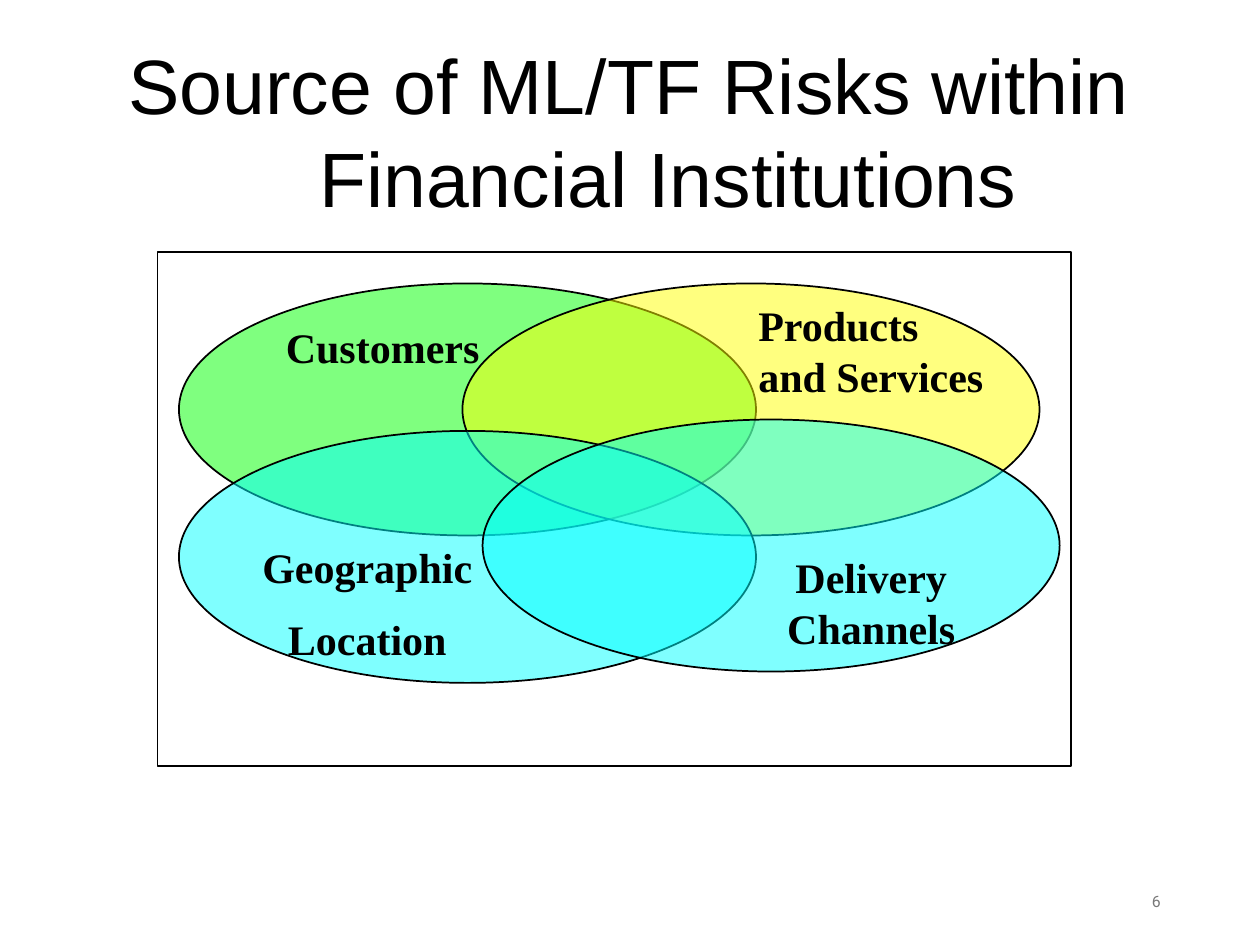
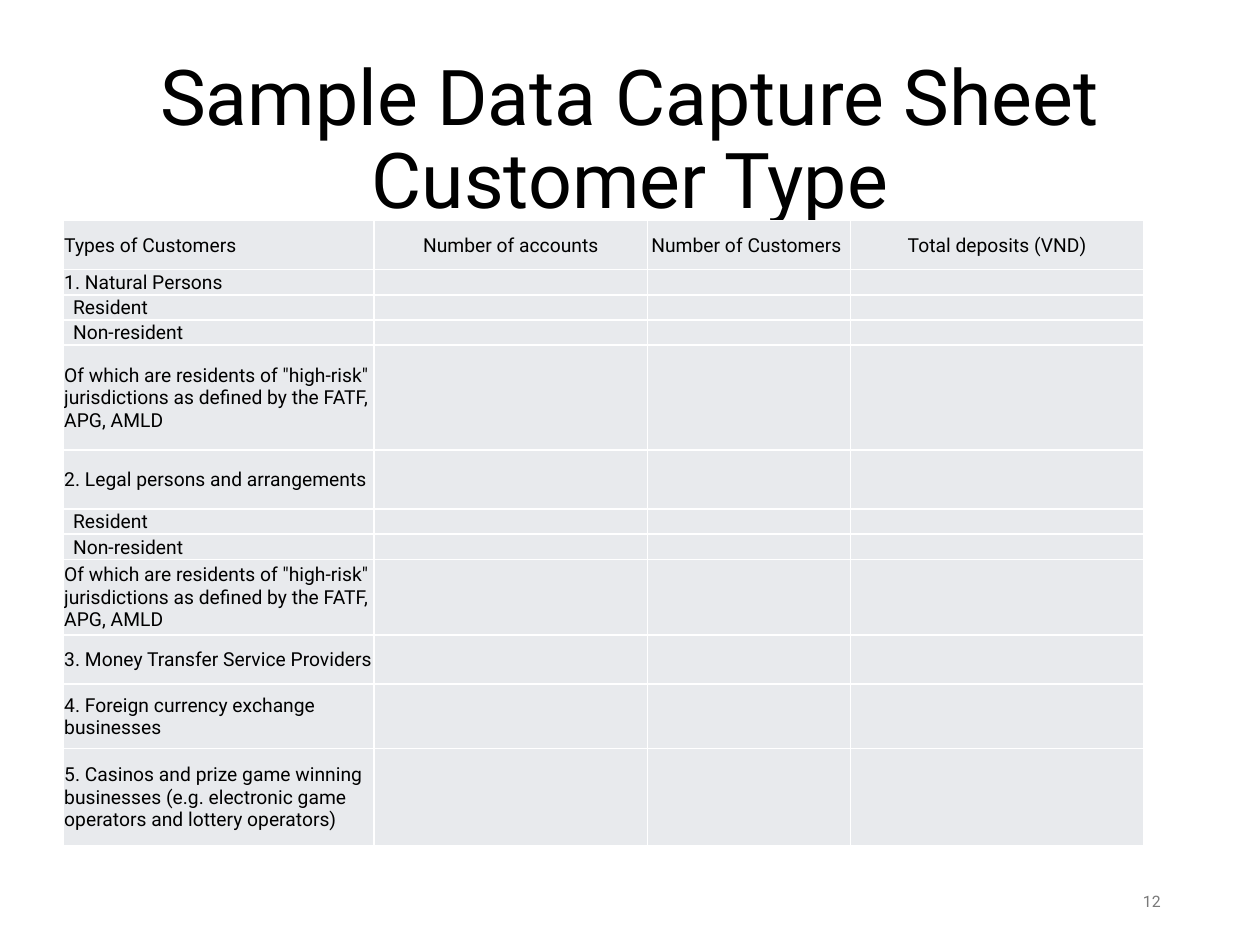
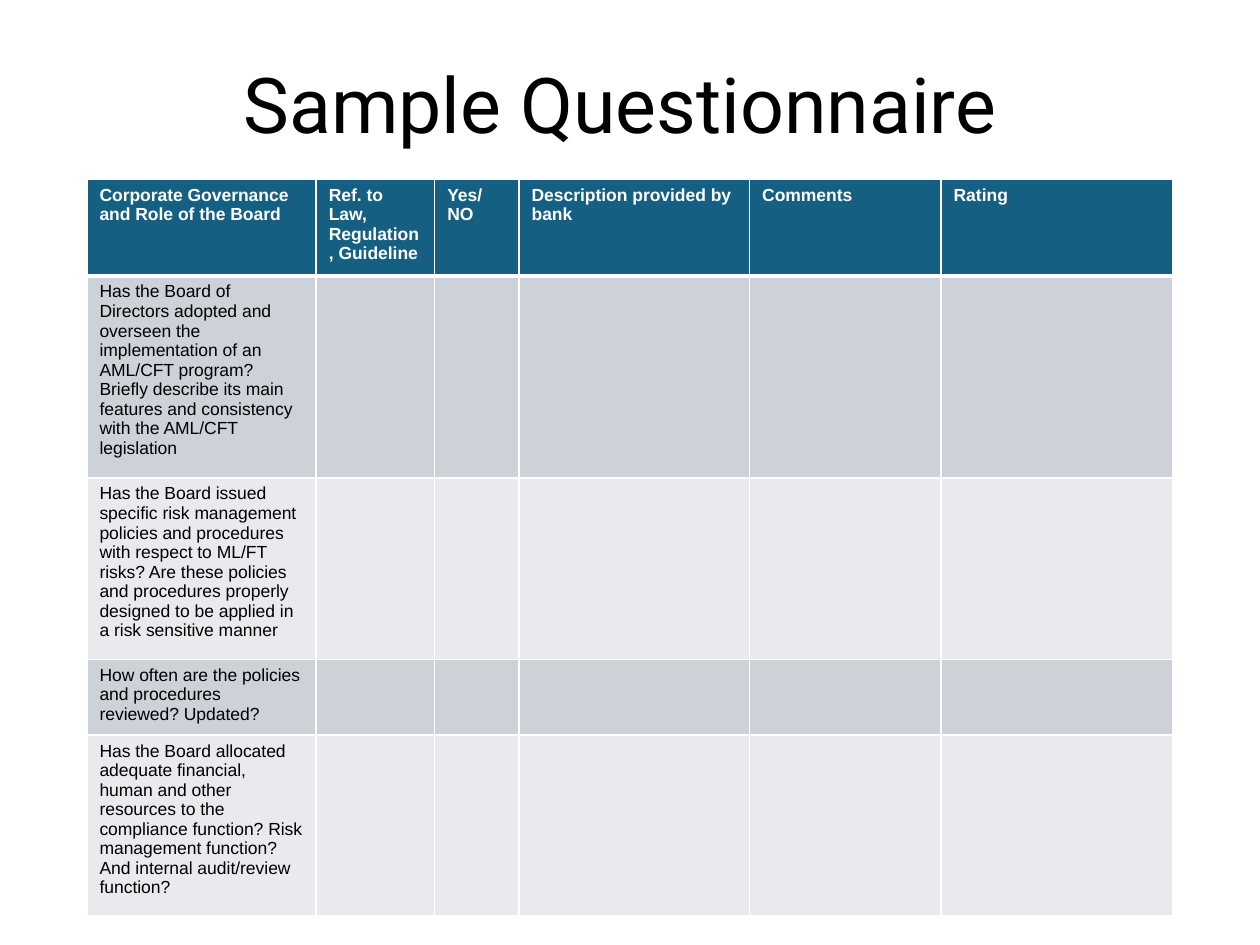
from typing import NamedTuple

import lxml.etree
import pptx
import pptx.dml.color
import pptx.enum.shapes
import pptx.enum.text
import pptx.oxml.ns
import pptx.util

Inches = pptx.util.Inches
Pt = pptx.util.Pt
ALIGN = pptx.enum.text.PP_ALIGN
ANCHOR = pptx.enum.text.MSO_ANCHOR
SHAPE = pptx.enum.shapes.MSO_SHAPE
qn = pptx.oxml.ns.qn

BLACK, WHITE, GRAY = "000000", "FFFFFF", "797979"
TEAL, PALE, DARK = "156082", "E8EAED", "CCD2D8"
SANS, BODY, SERIF = "Roboto", "Arial", "Times New Roman"


class Box(NamedTuple):
    left: float
    top: float
    width: float
    height: float

    def place(self) -> list:
        return [Inches(value) for value in self]


class Oval(NamedTuple):
    left: float
    top: float
    fill: str


class Label(NamedTuple):
    text: str
    box: Box
    align: ALIGN


class Row(NamedTuple):
    text: str
    height: float
    inset: float = 0.01


def color(code: str) -> pptx.dml.color.RGBColor:
    return pptx.dml.color.RGBColor.from_string(code)


def write(frame, text: str, *, size: float, font: str = SANS, fill: str = BLACK,
          bold: bool = False, align: ALIGN = ALIGN.LEFT, line: float = 1,
          gap: float = 0, hang: float = 0) -> None:
    """Fill a frame, one paragraph per line; gap is the space between them."""
    for index, part in enumerate(text.split("\n")):
        para = frame.add_paragraph() if index else frame.paragraphs[0]
        para.text = part
        para.alignment = align
        para.line_spacing = line
        para.space_before = Pt(gap if index else 0)
        if hang:
            props = para._p.get_or_add_pPr()
            props.set("marL", str(Inches(hang)))
            props.set("indent", str(-Inches(hang)))
        for run in para.runs:
            run.font.size = Pt(size)
            run.font.name = font
            run.font.bold = bold
            run.font.color.rgb = color(fill)
        if not part:
            # An empty cell needs a small end mark to keep its row low.
            lxml.etree.SubElement(para._p, qn("a:endParaRPr"), sz=str(int(size * 100)))


def add_text(slide, box: Box, text: str, anchor: ANCHOR = ANCHOR.TOP, **style) -> None:
    frame = slide.shapes.add_textbox(*box.place()).text_frame
    frame.word_wrap = True
    frame.vertical_anchor = anchor
    write(frame, text, **style)


def add_title(slide, text: str, height: float) -> None:
    add_text(slide, Box(0.69, 0.4, 8.62, height), text, ANCHOR.MIDDLE,
             size=44, align=ALIGN.CENTER, line=0.9)


def add_page(deck, number: int):
    slide = deck.slides.add_slide(deck.slide_layouts[6])
    add_text(slide, Box(7.06, 6.95, 2.25, 0.4), str(number), ANCHOR.MIDDLE,
             size=9, fill=GRAY, align=ALIGN.RIGHT)
    return slide


def add_form(slide, kind: SHAPE, box: Box, fill: str, alpha: int = 100) -> None:
    """Draw a black-edged shape; alpha is the opacity in percent."""
    form = slide.shapes.add_shape(kind, *box.place())
    form.shadow.inherit = False
    form.fill.solid()
    form.fill.fore_color.rgb = color(fill)
    form.line.color.rgb = color(BLACK)
    form.line.width = Pt(1)
    if alpha < 100:
        tint = form._element.spPr.find(qn("a:solidFill"))[0]
        lxml.etree.SubElement(tint, qn("a:alpha"), val=str(alpha * 1000))


def add_grid(slide, left: float, top: float, widths: list[float], heights: list[float]):
    box = Box(left, top, sum(widths), sum(heights))
    frame = slide.shapes.add_table(len(heights), len(widths), *box.place())
    table = frame.table
    table.first_row = table.horz_banding = False
    for column, width in zip(table.columns, widths):
        column.width = Inches(width)
    for row, height in zip(table.rows, heights):
        row.height = Inches(height)
    return table


def paint(cell, fill: str, top: float = 1, bottom: float = 1) -> None:
    """Give a cell its fill and white borders."""
    props = cell._tc.get_or_add_tcPr()
    for side, width in (("L", 1), ("R", 1), ("T", top), ("B", bottom)):
        edge = lxml.etree.SubElement(props, qn(f"a:ln{side}"), w=str(Pt(width)))
        solid = lxml.etree.SubElement(edge, qn("a:solidFill"))
        lxml.etree.SubElement(solid, qn("a:srgbClr"), val=WHITE)
    cell.fill.solid()
    cell.fill.fore_color.rgb = color(fill)


OVALS = [Oval(1.42, 2.25, "00FF00"), Oval(3.67, 2.25, "FFFF00"),
         Oval(1.42, 3.42, "00FFFF"), Oval(3.83, 3.33, "00FFFF")]
LABELS = [
    Label("Customers", Box(2.17, 2.5, 1.83, 0.5), ALIGN.LEFT),
    Label("Products and Services", Box(5.92, 2.33, 2, 0.91), ALIGN.LEFT),
    Label("Geographic\nLocation", Box(1.83, 4.25, 2.17, 1.11), ALIGN.CENTER),
    Label("Delivery Channels", Box(5.83, 4.33, 2.17, 0.91), ALIGN.CENTER),
]


def draw_risks(deck) -> None:
    slide = add_page(deck, 6)
    add_form(slide, SHAPE.RECTANGLE, Box(1.25, 2, 7.25, 4.08), WHITE)
    add_text(slide, Box(0.58, 0.25, 8.83, 1.42),
             "Source of ML/TF Risks within Financial Institutions ",
             size=44, font=BODY, align=ALIGN.CENTER, hang=0.79)
    *under, last = OVALS
    *early, final = LABELS
    for ovals, labels in ((under, early), ([last], [final])):
        for oval in ovals:
            add_form(slide, SHAPE.OVAL, Box(oval.left, oval.top, 4.58, 2), oval.fill, 50)
        for label in labels:
            add_text(slide, label.box, label.text, size=24, font=SERIF, bold=True,
                     align=label.align, gap=12)


HEADS = ["Types of Customers", "Number of accounts", "Number of Customers ",
         "Total deposits (VND)"]
ABROAD = ('Of which are residents of "high-risk" jurisdictions as defined by '
          "the FATF, APG, AMLD")
LOCAL = [Row("Resident", 0.2, 0.08), Row("Non-resident", 0.2, 0.08)]
TYPES = [
    Row("1. Natural Persons", 0.2), *LOCAL, Row(ABROAD, 0.83),
    Row("2. Legal persons and arrangements", 0.47), *LOCAL, Row(ABROAD, 0.6),
    Row("3. Money Transfer Service Providers", 0.39),
    Row("4. Foreign currency exchange businesses", 0.51),
    Row("5. Casinos and prize game winning businesses (e.g. electronic game "
        "operators and lottery operators)", 0.77),
]


def draw_types(deck) -> None:
    slide = add_page(deck, 12)
    add_title(slide, "Sample Data Capture Sheet\vCustomer Type", 1.45)
    rows = [Row(HEADS[0], 0.39), *TYPES]
    table = add_grid(slide, 0.5, 1.75, [2.47, 2.17, 1.61, 2.33],
                     [row.height for row in rows])
    for r, row in enumerate(rows):
        texts = HEADS if r == 0 else [row.text, "", "", ""]
        for c, text in enumerate(texts):
            cell = table.cell(r, c)
            paint(cell, PALE)
            cell.vertical_anchor = ANCHOR.MIDDLE
            cell.margin_left = Inches(row.inset)
            cell.margin_right = cell.margin_top = Inches(0.01)
            cell.margin_bottom = 0
            write(cell.text_frame, text, size=11,
                  align=ALIGN.CENTER if c else ALIGN.LEFT)


TOPICS = ["Corporate Governance and Role of the Board",
          "Ref. to Law, Regulation, Guideline", "Yes/NO",
          "Description provided by bank", "Comments", "Rating"]
ASKED = [
    Row("Has the Board of Directors adopted and overseen the implementation of an "
        "AML/CFT program? Briefly describe its main features and consistency with "
        "the AML/CFT legislation", 1.6),
    Row("Has the Board issued specific risk management policies and procedures with "
        "respect to ML/FT risks? Are these policies and procedures properly designed "
        "to be applied in a risk sensitive manner", 1.44),
    Row("How often are the policies and procedures reviewed? Updated?", 0.6),
    Row("Has the Board allocated adequate financial, human and other resources to the "
        "compliance function? Risk management function? And internal audit/review "
        "function?", 1.27),
]


def draw_survey(deck) -> None:
    slide = add_page(deck, 16)
    add_title(slide, "Sample Questionnaire ", 0.93)
    table = add_grid(slide, 0.69, 1.42, [1.82, 0.94, 0.67, 1.83, 1.52, 1.84],
                     [0.77] + [row.height for row in ASKED])
    for c, topic in enumerate(TOPICS):
        head = table.cell(0, c)
        paint(head, TEAL, bottom=3)
        write(head.text_frame, topic, size=10, font=BODY, fill=WHITE, bold=True)
        for r, row in enumerate(ASKED, 1):
            cell = table.cell(r, c)
            paint(cell, DARK if r % 2 else PALE, top=3 if r == 1 else 1)
            write(cell.text_frame, "" if c else row.text, size=10, font=BODY)


def main() -> None:
    deck = pptx.Presentation()
    deck.slide_width, deck.slide_height = Inches(10), Inches(7.5)
    draw_risks(deck)
    draw_types(deck)
    draw_survey(deck)
    deck.save("out.pptx")


if __name__ == "__main__":
    main()
